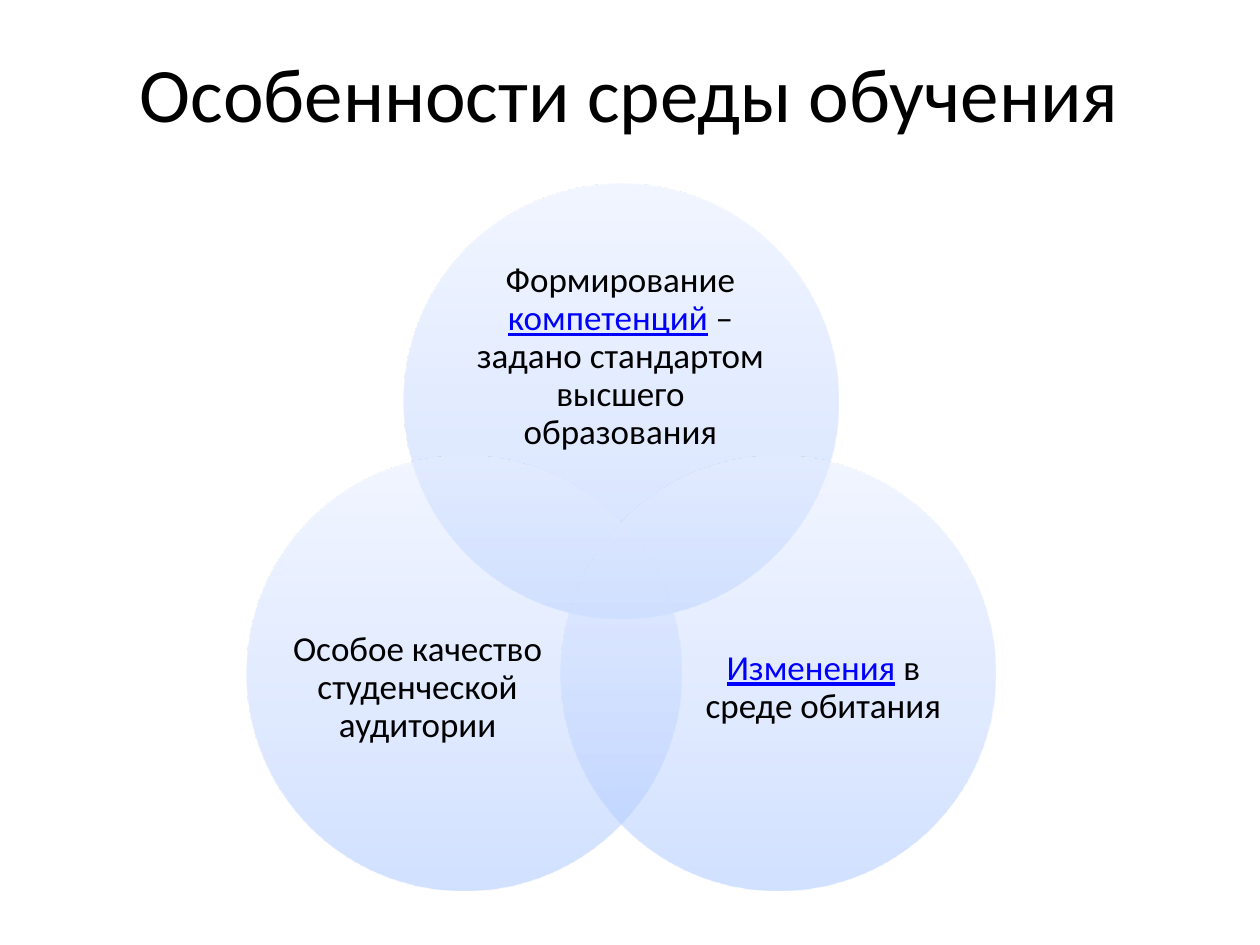
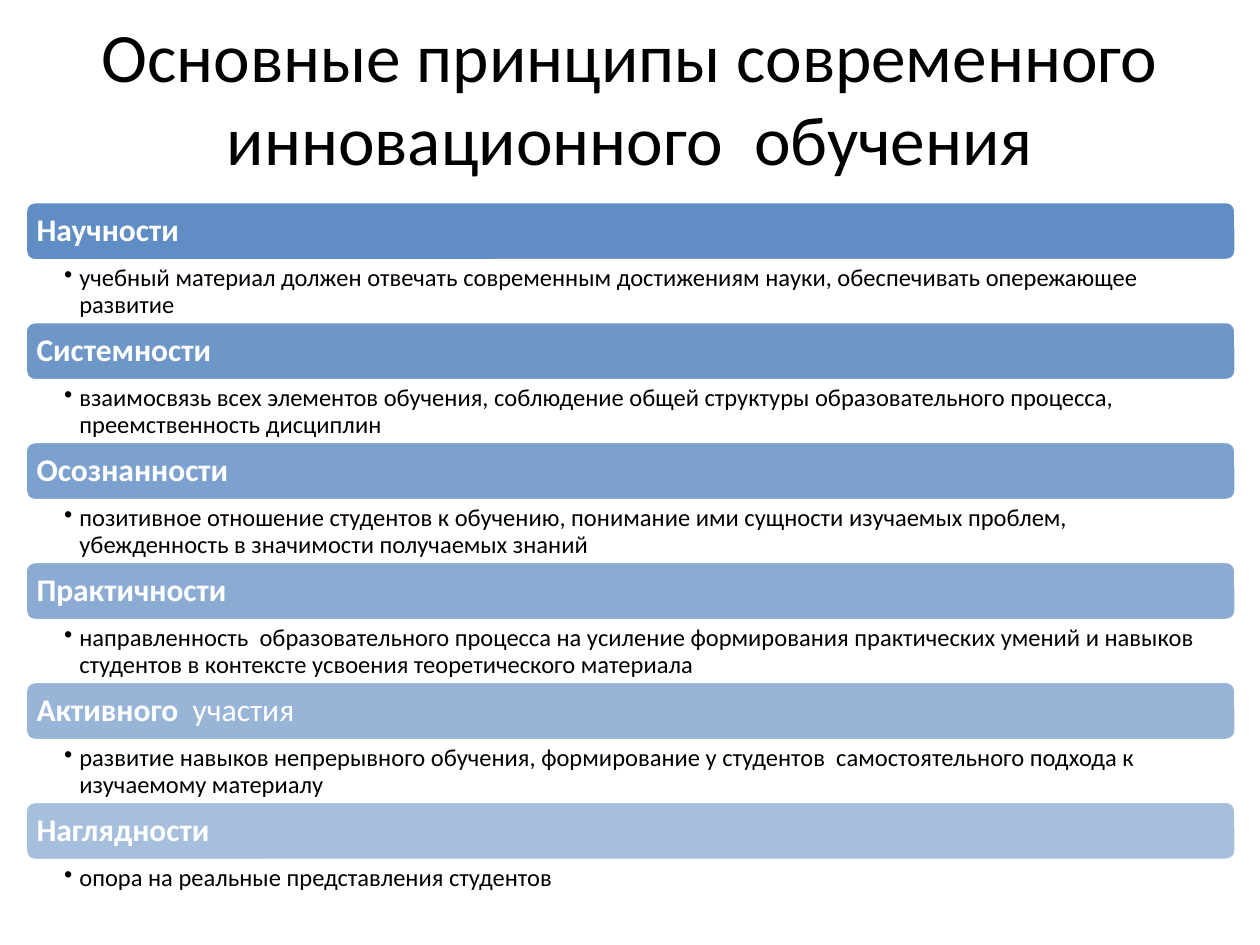
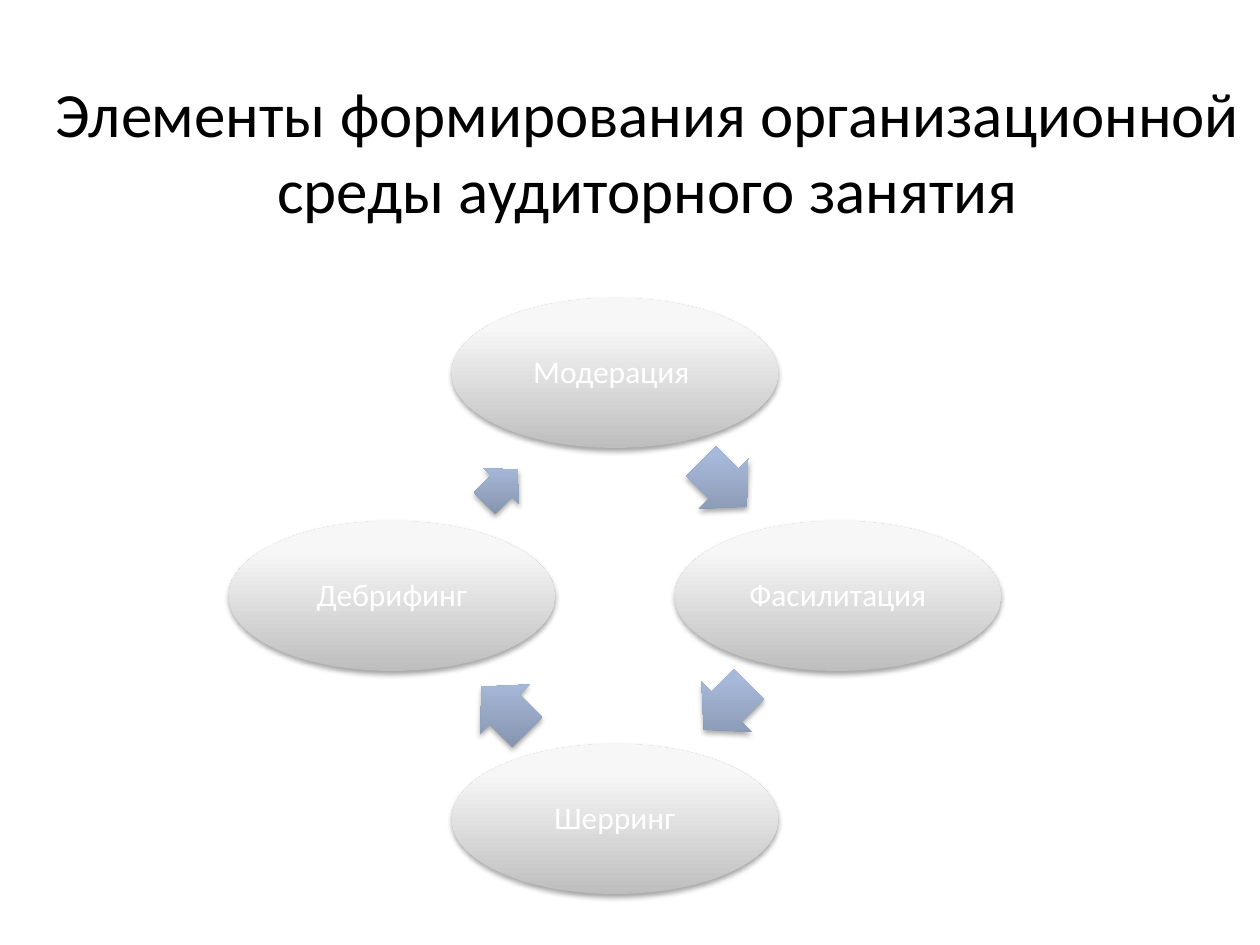
from math import cos, radians, sin

from pptx import Presentation
from pptx.dml.color import RGBColor
from pptx.enum.shapes import MSO_SHAPE as Shape
from pptx.enum.text import MSO_ANCHOR as Anchor, PP_ALIGN as Align
from pptx.oxml import parse_xml
from pptx.oxml.ns import nsdecls, qn
from pptx.util import Inches, Pt

FONT = "Calibri"
COLORS = {
    "text": "000000",
    "light": "FFFFFF",
    "link": "0000FF",
    "band": "4F81BD",
}

# Gradient stops from bottom to top: position %, colour, opacity %
VENN_STOPS = [(0, "A4C4FF", 50), (35, "BFD4FF", 50), (100, "E6EEFF", 50)]
NODE_STOPS = [(0, "BEBEBE", 100), (80, "F7F7F7", 100), (100, "F8F8F8", 100)]
ARROW_STOPS = [(0, "818FA8", 100), (80, "A7B9DA", 100), (100, "A7BADC", 100)]

# Text formats
CENTERED = {"alignment": Align.CENTER}
TIGHT_CENTERED = {"alignment": Align.CENTER, "line_spacing": 0.9}
TIGHT_LEFT = {"alignment": Align.LEFT, "line_spacing": 0.9}
LINK = {"color": "link", "underline": True}

# Slide 1: angle on the ring, text box, runs
VENN_CIRCLES = [
    (-90, (3.66, 2.06, 2.53, 1.55),
     [("Формирование ", {}), ("компетенций", LINK),
      (" – задано стандартом высшего образования", {})]),
    (30, (5.5, 4.51, 2.07, 1.9), [("Изменения", LINK), (" в среде обитания", {})]),
    (150, (2.28, 4.51, 2.07, 1.9),
     [("Особое качество студенческой аудитории", {})]),
]

# Slide 2: bold name, plain ending, explanation
PRINCIPLES = [
    ("Научности", "", "учебный материал должен отвечать современным достижениям "
     "науки, обеспечивать опережающее развитие"),
    ("Системности", "", "взаимосвязь всех элементов обучения, соблюдение общей "
     "структуры образовательного процесса, преемственность дисциплин"),
    ("Осознанности", "", "позитивное отношение студентов к обучению, понимание ими "
     "сущности изучаемых проблем, убежденность в значимости получаемых знаний"),
    ("Практичности", "", "направленность  образовательного процесса на усиление "
     "формирования практических умений и навыков студентов в контексте усвоения "
     "теоретического материала"),
    ("Активного", "  участия", "развитие навыков непрерывного обучения, формирование "
     "у студентов  самостоятельного подхода к изучаемому материалу"),
    ("Наглядности", "", "опора на реальные представления студентов"),
]

# Slide 3: stage and the box of the arrow that leaves it
STAGES = [
    ("Модерация ", (5.49, 3.56, 0.51, 0.56)),
    ("Фасилитация", (5.51, 5.33, 0.51, 0.56)),
    ("Шерринг", (3.75, 5.35, 0.51, 0.56)),
    ("Дебрифинг", (3.79, 3.66, 0.38, 0.4)),
]


def apply_format(target, values):
    for name, value in values.items():
        setattr(target, name, value)


def rgb(name):
    return RGBColor.from_string(COLORS[name])


def centered_box(x, y, width, height):
    return x - width / 2, y - height / 2, width, height


def on_ring(center, radius, angle):
    turn = radians(angle)
    return center[0] + radius * cos(turn), center[1] + radius * sin(turn)


def add_text(slide, box, runs, size, paragraph_format, color="text",
             insets=(0, 0, 0, 0), anchor=Anchor.MIDDLE):
    """Place one paragraph; each run is its text and its own format."""
    frame = slide.shapes.add_textbox(*map(Inches, box)).text_frame
    left, top, right, bottom = map(Inches, insets)
    apply_format(frame, {
        "word_wrap": True, "vertical_anchor": anchor,
        "margin_left": left, "margin_top": top,
        "margin_right": right, "margin_bottom": bottom,
    })
    paragraph = frame.paragraphs[0]
    apply_format(paragraph, paragraph_format)
    for words, own_format in runs:
        run = paragraph.add_run()
        run.text = words
        font_format = {"name": FONT, "size": Pt(size), **own_format}
        run.font.color.rgb = rgb(font_format.pop("color", color))
        apply_format(run.font, font_format)
    return paragraph


def add_title(slide, box, words, size):
    add_text(slide, box, [(words, {})], size, CENTERED,
             insets=(0.1, 0.05, 0.1, 0.05))


def add_bullet(paragraph):
    properties = paragraph._p.get_or_add_pPr()
    indent = Inches(0.12)
    properties.set("marL", str(indent))
    properties.set("indent", str(-indent))
    properties.append(parse_xml(f'<a:buChar {nsdecls("a")} char="•"/>'))


def add_gradient_shape(slide, kind, box, stops):
    shape = slide.shapes.add_shape(kind, *map(Inches, box))
    shape.shadow.inherit = False
    shape.line.fill.background()
    shape.fill.background()
    stop_xml = "".join(
        f'<a:gs pos="{position * 1000}"><a:srgbClr val="{color}">'
        f'<a:alpha val="{opacity * 1000}"/></a:srgbClr></a:gs>'
        for position, color, opacity in stops)
    gradient = parse_xml(
        f'<a:gradFill {nsdecls("a")} rotWithShape="0"><a:gsLst>{stop_xml}</a:gsLst>'
        f'<a:lin ang="{270 * 60000}" scaled="0"/></a:gradFill>')
    properties = shape._element.spPr
    properties.replace(properties.find(qn("a:noFill")), gradient)
    return shape


def add_drop_shadow(shape):
    effects = shape._element.spPr.find(qn("a:effectLst"))
    effects.append(parse_xml(
        f'<a:outerShdw {nsdecls("a")} blurRad="{Pt(3.1)}" dist="{Pt(1.8)}" '
        f'dir="{90 * 60000}" rotWithShape="0"><a:srgbClr val="{COLORS["text"]}">'
        '<a:alpha val="35000"/></a:srgbClr></a:outerShdw>'))


def add_band(slide, box, opacity):
    band = slide.shapes.add_shape(Shape.ROUNDED_RECTANGLE, *map(Inches, box))
    band.shadow.inherit = False
    band.fill.solid()
    band.fill.fore_color.rgb = rgb("band")
    band._element.spPr.find(qn("a:solidFill"))[0].append(
        parse_xml(f'<a:alpha {nsdecls("a")} val="{opacity * 1000}"/>'))
    band.line.color.rgb = rgb("light")
    band.line.width = Pt(2)


def build_environment(slide):
    add_title(slide, (0.5, 0.3, 9, 0.85), "Особенности среды обучения", 44)
    for angle, text_box, runs in VENN_CIRCLES:
        x, y = on_ring((4.93, 4.62), 1.44, angle)
        add_gradient_shape(slide, Shape.OVAL, centered_box(x, y, 3.45, 3.45),
                           VENN_STOPS)
        add_text(slide, text_box, runs, 20, TIGHT_CENTERED)


def build_principles(slide):
    add_title(slide, (0.5, 0.3, 9, 0.93),
              "Основные принципы современного инновационного  обучения", 39.6)
    first_top, last_top = 1.6, 6.36
    step = (last_top - first_top) / (len(PRINCIPLES) - 1)
    for index, (name, ending, explanation) in enumerate(PRINCIPLES):
        top = first_top + index * step
        add_band(slide, (0.2, top, 9.61, 0.47), 90 - 8 * index)
        heading = [(name, {"bold": True})] + ([(ending, {})] if ending else [])
        add_text(slide, (0.22, top + 0.02, 9.56, 0.43), heading, 18, TIGHT_LEFT,
                 "light", (0.07, 0.07, 0.07, 0.07))
        detail_height = 0.33 if top + step > last_top + step / 2 else 0.48
        add_bullet(add_text(
            slide, (0.2, top + 0.48, 9.61, detail_height), [(explanation, {})], 14,
            TIGHT_LEFT, insets=(0.31, 0.03, 0.14, 0.03), anchor=Anchor.TOP))


def build_cycle(slide):
    add_title(slide, (0.28, 0.21, 9.72, 1.97),
              "Элементы формирования организационной среды аудиторного занятия", 36)
    for index, (stage, arrow_box) in enumerate(STAGES):
        x, y = on_ring((4.88, 4.73), 1.77, 90 * index - 90)
        node = add_gradient_shape(slide, Shape.OVAL,
                                  centered_box(x, y, 2.59, 1.19), NODE_STOPS)
        add_drop_shadow(node)
        add_text(slide, centered_box(x, y, 1.83, 0.84), [(stage, {})], 18,
                 TIGHT_CENTERED, "light", (0.03, 0.03, 0.03, 0.03))
        arrow = add_gradient_shape(slide, Shape.RIGHT_ARROW, arrow_box, ARROW_STOPS)
        arrow.rotation = 45 + 90 * index
        arrow.adjustments[0] = 0.6
        arrow.adjustments[1] = 0.5
        add_drop_shadow(arrow)


def main():
    deck = Presentation()
    apply_format(deck, {"slide_width": Inches(10), "slide_height": Inches(7.5)})
    blank = deck.slide_layouts[6]
    for build in (build_environment, build_principles, build_cycle):
        build(deck.slides.add_slide(blank))
    deck.save("out.pptx")


if __name__ == "__main__":
    main()
